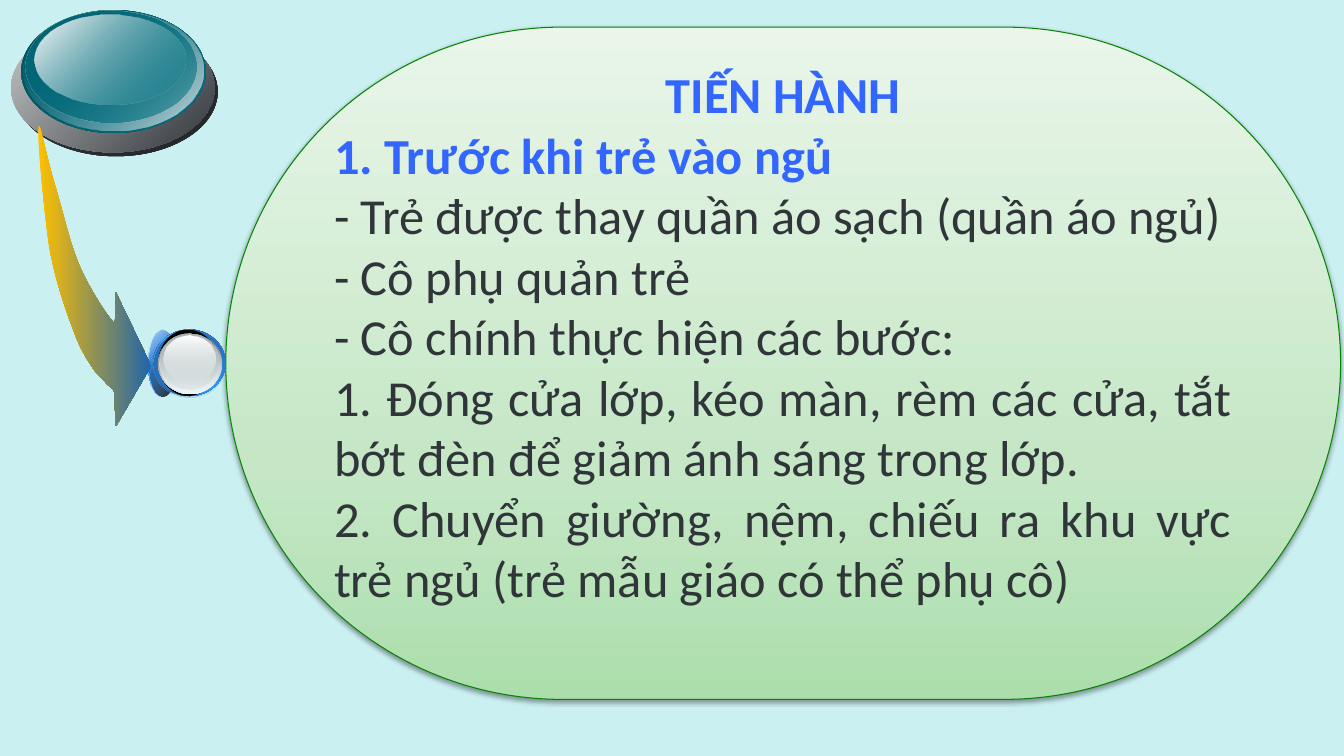
"""Build the nap-time procedure slide with its button, arrow and text capsule."""
import pptx
import pptx.dml.color
import pptx.enum.shapes
import pptx.enum.text
import pptx.oxml
import pptx.oxml.ns
import pptx.util
from lxml import etree

Pt = pptx.util.Pt
RGB = pptx.dml.color.RGBColor
SHAPE = pptx.enum.shapes.MSO_SHAPE
ALIGN = pptx.enum.text.PP_ALIGN
qn = pptx.oxml.ns.qn

SKY = RGB(0xCB, 0xF0, 0xF1)
WHITE = RGB(0xFF, 0xFF, 0xFF)
BLACK = RGB(0x00, 0x00, 0x00)
INK = RGB(0x30, 0x35, 0x3A)
DARK_INK = RGB(0x23, 0x27, 0x2A)
GREY = RGB(0xC7, 0xC8, 0xC8)
DEEP_TEAL = RGB(0x01, 0x51, 0x5D)
MID_TEAL = RGB(0x02, 0x66, 0x75)
TEAL = RGB(0x02, 0x71, 0x82)
MIST = RGB(0xD4, 0xDB, 0xDE)
AZURE = RGB(0x33, 0x99, 0xFF)
NAVY = RGB(0x1C, 0x53, 0x8A)
STEEL = RGB(0x20, 0x61, 0xA2)
ARROW_BLUE = RGB(0x21, 0x65, 0xAA)
GOLD = RGB(0xFF, 0xC0, 0x00)
SLATE = RGB(0x63, 0x68, 0x69)
SILVER = RGB(0xAA, 0xB2, 0xB3)
PEARL = RGB(0xD6, 0xE1, 0xE2)
PALE_PEARL = RGB(0xF1, 0xF5, 0xF5)
LEAF = RGB(0xAC, 0xDE, 0xAC)
LIGHT_LEAF = RGB(0xC5, 0xE7, 0xC6)
PALE_LEAF = RGB(0xE9, 0xF6, 0xE9)
GREEN = RGB(0x04, 0x83, 0x06)
HEADING = RGB(0x33, 0x66, 0xFF)

# Each ellipse: box, gradient angle, stops of (position, colour, opacity)
BUTTON = [
    ((10.1, 19.4, 145.4, 92.2), 45, [(0, INK, 100), (100, DARK_INK, 100)]),
    ((7.9, 16.6, 145.4, 92.2), 45, [(0, GREY, 100), (100, INK, 100)]),
    ((15.1, 7.2, 131.8, 87.8), 45, [(0, DEEP_TEAL, 100), (100, TEAL, 100)]),
    ((16.6, 7.2, 128.9, 85.7), 45, [(0, TEAL, 0), (100, MIST, 100)]),
    ((18, 7.9, 122.4, 79.9), 45, [(0, MID_TEAL, 100), (100, TEAL, 48)]),
    ((24.5, 10.1, 108, 64.8), 45, [(0, WHITE, 100), (100, TEAL, 38)]),
]
BEAD = [
    ((105.8, 236.2, 20.2, 47.5), 45, [(0, WHITE, 100), (50, AZURE, 100), (100, WHITE, 100)]),
    ((105.8, 235.4, 20.2, 47.5), 45, [(0, AZURE, 32), (100, BLACK, 90)]),
    ((109.4, 235.4, 51.8, 47.5), 315, [(0, NAVY, 100), (50, AZURE, 100), (100, NAVY, 100)]),
    ((109.4, 236.2, 51.8, 47.5), 45, [(0, STEEL, 100), (100, AZURE, 0)]),
    ((113, 235.4, 42.5, 47.5), 0, [(0, BLACK, 100), (100, BLACK, 100)]),
    ((113, 238.3, 45.4, 43.2), 90, [(0, SLATE, 100), (100, PEARL, 100)]),
    ((113.8, 238.3, 44.6, 42.5), 90, [(0, PEARL, 0), (100, PALE_PEARL, 100)]),
    ((113.8, 238.3, 42.5, 39.6), 90, [(0, SILVER, 100), (100, PEARL, 48)]),
    ((116.6, 239.8, 37.4, 32.4), 90, [(0, WHITE, 100), (100, PEARL, 38)]),
]
CAPSULE = (161.3, 19.4, 796.3, 480.2)
CAPSULE_STOPS = [(0, LEAF, 100), (35, LIGHT_LEAF, 100), (100, PALE_LEAF, 100)]
ARROW_START = (27.4, 92.2)
ARROW = [
    [(26.6, 99.4), (31.7, 152.6), (35.3, 176.4)],
    [(39.6, 200.9), (46.8, 221), (52.6, 236.2)],
    [(57.6, 250.6), (63.4, 258.5), (67.7, 265)],
    [(77, 275)], [(81.4, 278.6)], [(82.8, 304.6)],
    [(108, 261.4)], [(82.8, 208.8)], [(82.1, 231.1)],
    [(77.8, 228.2), (64.1, 206.6), (56.9, 190.1)],
    [(49.7, 173.5), (43.9, 146.9), (38.9, 131)],
    [(33.8, 114.5), (27.4, 80.6), (27.4, 92.2)],
]
LINES = [
    ("TIẾN HÀNH", ALIGN.CENTER, HEADING, True),
    ("1. Trước khi trẻ vào ngủ", ALIGN.LEFT, HEADING, True),
    ("- Trẻ được thay quần áo sạch (quần áo ngủ)", ALIGN.LEFT, INK, False),
    ("- Cô phụ quản trẻ", ALIGN.LEFT, INK, False),
    ("- Cô chính thực hiện các bước:", ALIGN.LEFT, INK, False),
    ("1. Đóng cửa lớp, kéo màn, rèm các cửa, tắt bớt đèn để giảm ánh sáng trong lớp.",
     ALIGN.JUSTIFY, INK, False),
    ("2. Chuyển giường, nệm, chiếu ra khu vực trẻ ngủ (trẻ mẫu giáo có thể phụ cô)",
     ALIGN.JUSTIFY, INK, False),
]


def add_colour(parent, colour, opacity):
    clr = etree.SubElement(parent, qn("a:srgbClr"), val=str(colour))
    if opacity < 100:
        etree.SubElement(clr, qn("a:alpha"), val=str(opacity * 1000))


def paint(sp, angle, stops):
    sp.shadow.inherit = False
    sp.line.fill.background()
    sp.fill.gradient()
    sp.fill.gradient_angle = (360 - angle) % 360
    gs_list = sp.element.spPr.find(".//" + qn("a:gsLst"))
    for gs in list(gs_list):
        gs_list.remove(gs)
    for position, colour, opacity in stops:
        gs = etree.SubElement(gs_list, qn("a:gs"), pos=str(position * 1000))
        add_colour(gs, colour, opacity)


def add_ellipses(s, ellipses):
    group = s.shapes.add_group_shape()
    for box, angle, stops in ellipses:
        paint(group.shapes.add_shape(SHAPE.OVAL, *map(Pt, box)), angle, stops)


def add_capsule(s):
    sp = s.shapes.add_shape(SHAPE.ROUNDED_RECTANGLE, *map(Pt, CAPSULE))
    sp.adjustments[0] = 0.5
    paint(sp, 270, CAPSULE_STOPS)
    sp.line.color.rgb = GREEN
    sp.line.width = Pt(0.75)
    shadow = etree.SubElement(
        sp.element.spPr.find(qn("a:effectLst")), qn("a:outerShdw"),
        blurRad=str(Pt(3.1)), dist=str(Pt(1.6)), dir="5400000", rotWithShape="0")
    add_colour(shadow, BLACK, 38)
    tf = sp.text_frame
    tf.word_wrap = True
    tf.vertical_anchor = pptx.enum.text.MSO_ANCHOR.MIDDLE
    tf.margin_left = tf.margin_right = Pt(7.2)
    tf.margin_top, tf.margin_bottom = Pt(3.6), Pt(43)
    for i, (text, align, colour, bold) in enumerate(LINES):
        p = tf.add_paragraph() if i else tf.paragraphs[0]
        p.text = text
        p.alignment = align
        p.font.name, p.font.size, p.font.bold = "Calibri", Pt(36), bold
        p.font.color.rgb = colour


def bezier(a, b, c, d, t):
    u = 1 - t
    return tuple(u**3 * a[k] + 3 * u * u * t * b[k] + 3 * u * t * t * c[k] + t**3 * d[k]
                 for k in (0, 1))


def add_arrow(s):
    points = [ARROW_START]
    for segment in ARROW:
        start = points[-1]
        if len(segment) == 1:
            points += segment
        else:
            points += [bezier(start, *segment, step / 12) for step in range(1, 13)]
    units = [(x * 100, y * 100) for x, y in points]
    builder = s.shapes.build_freeform(*units[0], scale=Pt(1) / 100)
    builder.add_line_segments(units[1:], close=True)
    paint(builder.convert_to_shape(), 0, [(0, GOLD, 100), (100, ARROW_BLUE, 100)])


def main():
    prs = pptx.Presentation()
    prs.slide_width, prs.slide_height = Pt(960), Pt(540)
    s = prs.slides.add_slide(prs.slide_layouts[6])
    s.background.fill.solid()
    s.background.fill.fore_color.rgb = SKY
    add_ellipses(s, BUTTON)
    add_capsule(s)
    add_ellipses(s, BEAD)
    add_arrow(s)
    prs.save("out.pptx")


if __name__ == "__main__":
    main()
